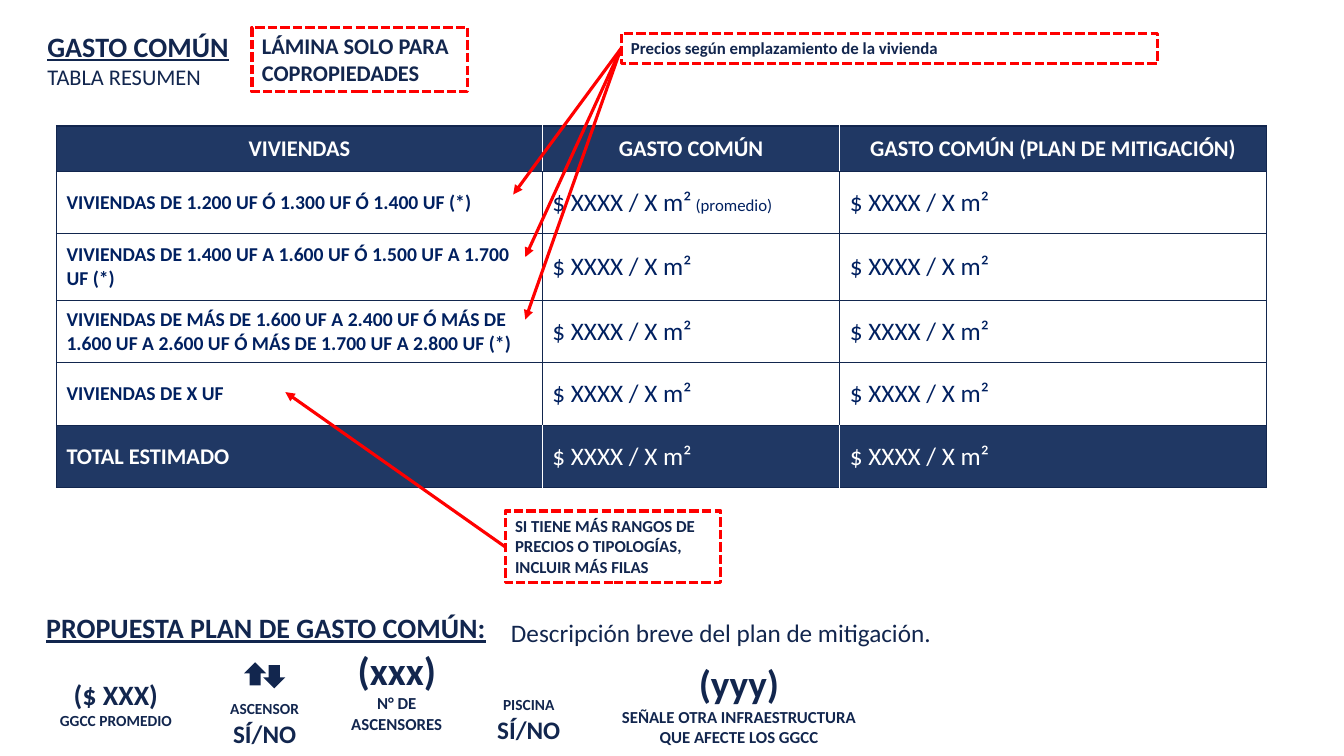
from lxml import etree
from pptx import Presentation
from pptx import util as u
from pptx.dml.color import RGBColor
from pptx.enum import dml, shapes, text
from pptx.oxml.ns import qn

# Content
NAVY, HEADER, BLUE, RED, WHITE = "12264E", "203864", "002060", "FF0000", "FFFFFF"
COST = "$ XXXX / X m²"
TITLE = [("GASTO COMÚN", 20, True, True), ("TABLA RESUMEN", 16, False, False)]
HEADINGS = ["VIVIENDAS", "GASTO COMÚN", "GASTO COMÚN (PLAN DE MITIGACIÓN)"]
HOMES = [
    "VIVIENDAS DE 1.200 UF Ó 1.300 UF Ó 1.400 UF (*)",
    "VIVIENDAS DE 1.400 UF A 1.600 UF Ó 1.500 UF A 1.700 UF (*)",
    "VIVIENDAS DE MÁS DE 1.600 UF A 2.400 UF Ó MÁS DE 1.600 UF A 2.600 UF "
    "Ó MÁS DE 1.700 UF A 2.800 UF (*)",
    "VIVIENDAS DE X UF",
]
TOTAL = "TOTAL ESTIMADO"
COLS = [4.82, 2.95, 4.23]
ROWS = [0.45, 0.62, 0.66, 0.62, 0.62, 0.62]
TABLE_LEFT, TABLE_TOP = 0.56, 1.25

# Callouts: box, text, size, arrow targets
ROW_STEP, FIRST_TARGET = 0.62, 1.93
CALLOUTS = [
    ((2.5, 0.27, 2.14, 0.64), "LÁMINA SOLO PARA COPROPIEDADES", 16, []),
    ((5.01, 5.07, 2.14, 0.71),
     "SI TIENE MÁS RANGOS DE PRECIOS O TIPOLOGÍAS, INCLUIR MÁS FILAS", 12, [(2.83, 3.89)]),
    ((6.16, 0.33, 5.32, 0.3), "Precios según emplazamiento de la vivienda", 12,
     [(x, FIRST_TARGET + i * ROW_STEP) for i, x in enumerate((5.09, 5.21, 5.21))]),
]

# Plan: box, centred, lines of (text, size, bold, underline)
PLAN = [
    ((0.36, 6.01, 4.73, 0.44), False, [("PROPUESTA PLAN DE GASTO COMÚN:", 20, True, True)]),
    ((4.97, 6.08, 8.36, 0.4), False,
     [("Descripción breve del plan de mitigación.", 18, False, False)]),
    ((0.36, 6.67, 1.58, 0.62), True,
     [("($ XXX)", 20, True, False), ("GGCC PROMEDIO", 11, True, False)]),
    ((1.79, 6.89, 1.67, 0.59), True,
     [("ASCENSOR", 11, True, False), ("SÍ/NO", 18, True, False)]),
    ((3.31, 6.36, 1.25, 0.98), True,
     [("(xxx)", 28, True, False), ("N° DE", 12, True, False), ("ASCENSORES", 12, True, False)]),
    ((4.41, 6.85, 1.67, 0.59), True,
     [("PISCINA", 11, True, False), ("SÍ/NO", 18, True, False)]),
    ((5.93, 6.49, 2.8, 0.98), True,
     [("(yyy)", 28, True, False),
      ("SEÑALE OTRA INFRAESTRUCTURA QUE AFECTE LOS GGCC", 12, True, False)]),
]
LIFT_ARROWS = [((2.42, 6.57, 0.22, 0.23), 180), ((2.61, 6.6, 0.22, 0.23), 0)]


def rgb(color):
    return RGBColor.from_string(color)


def inches(box):
    return [u.Inches(v) for v in box]


def add_run(p, content, size=12, color=NAVY, bold=False, underline=False):
    r = p.add_run()
    r.text = content
    r.font.name, r.font.size = "Calibri", u.Pt(size)
    r.font.bold, r.font.underline = bold, underline
    r.font.color.rgb = rgb(color)


def write(tf, lines, align=text.PP_ALIGN.LEFT, anchor=text.MSO_ANCHOR.TOP):
    tf.word_wrap = True
    tf.auto_size = text.MSO_AUTO_SIZE.NONE
    tf.vertical_anchor = anchor
    for i, (content, size, bold, underline) in enumerate(lines):
        p = tf.add_paragraph() if i else tf.paragraphs[0]
        p.alignment = align
        add_run(p, content, size, bold=bold, underline=underline)


def add_block(kind, box, fill):
    sp = s.shapes.add_shape(kind, *inches(box))
    sp.shadow.inherit = False
    sp.fill.solid()
    sp.fill.fore_color.rgb = rgb(fill)
    sp.line.fill.background()
    return sp


def add_arrow(source, target):
    x, y = inches(target)
    line = s.shapes.add_connector(shapes.MSO_CONNECTOR.STRAIGHT, 0, 0, x, y)
    line.begin_connect(source, 1)
    line.line.color.rgb = rgb(RED)
    line.line.width = u.Pt(2.25)
    etree.SubElement(line.line._get_or_add_ln(), qn("a:tailEnd"), type="triangle")
    etree.SubElement(line._element.spPr, qn("a:effectLst"))


def add_border(cell, side, color):
    ln = etree.SubElement(cell._tc.get_or_add_tcPr(), qn("a:ln" + side), w=str(u.Pt(1)))
    fill = etree.SubElement(ln, qn("a:solidFill"))
    etree.SubElement(fill, qn("a:srgbClr"), val=color)


prs = Presentation()
prs.slide_width, prs.slide_height = u.Inches(13.33), u.Inches(7.5)
s = prs.slides.add_slide(prs.slide_layouts[5])

# Title
title = s.shapes.title
title.left, title.top, title.width, title.height = inches((0.37, 0.24, 6.79, 0.71))
write(title.text_frame, TITLE, text.PP_ALIGN.JUSTIFY)

# Table
table = s.shapes.add_table(
    len(ROWS), len(COLS), *inches((TABLE_LEFT, TABLE_TOP, sum(COLS), sum(ROWS)))).table
table.first_row = table.horz_banding = False
for col, width in zip(table.columns, COLS):
    col.width = u.Inches(width)
for row, height in zip(table.rows, ROWS):
    row.height = u.Inches(height)

rows = [HEADINGS] + [[name, COST, COST] for name in HOMES + [TOTAL]]
last_row, last_col = len(ROWS) - 1, len(COLS) - 1
for i, values in enumerate(rows):
    dark = i in (0, last_row)
    for j, value in enumerate(values):
        cell = table.cell(i, j)
        inner = WHITE if dark else NAVY
        add_border(cell, "L", inner if j else NAVY)
        add_border(cell, "R", inner if j < last_col else NAVY)
        add_border(cell, "T", NAVY)
        add_border(cell, "B", NAVY)
        cell.fill.solid()
        cell.fill.fore_color.rgb = rgb(HEADER if dark else WHITE)
        cell.vertical_anchor = text.MSO_ANCHOR.MIDDLE
        p = cell.text_frame.paragraphs[0]
        p.alignment = text.PP_ALIGN.LEFT if i else text.PP_ALIGN.CENTER
        label = i == 0 or j == 0
        size = (16 if dark else 14) if label else 18
        color = WHITE if dark else BLUE
        add_run(p, value, size, color, bold=label)
        if (i, j) == (1, 1):
            add_run(p, " (promedio)", 12, color)

# Callouts and their arrows
for box, content, size, targets in CALLOUTS:
    callout = add_block(shapes.MSO_SHAPE.RECTANGLE, box, WHITE)
    callout.line.color.rgb = rgb(RED)
    callout.line.width = u.Pt(2.25)
    callout.line.dash_style = dml.MSO_LINE.SQUARE_DOT
    write(callout.text_frame, [(content, size, True, False)])
    for target in targets:
        add_arrow(callout, target)

# Mitigation plan
for box, centred, lines in PLAN:
    tb = s.shapes.add_textbox(*inches(box))
    write(tb.text_frame, lines, text.PP_ALIGN.CENTER if centred else text.PP_ALIGN.LEFT)
for box, angle in LIFT_ARROWS:
    add_block(shapes.MSO_SHAPE.DOWN_ARROW, box, NAVY).rotation = angle

prs.save("out.pptx")
